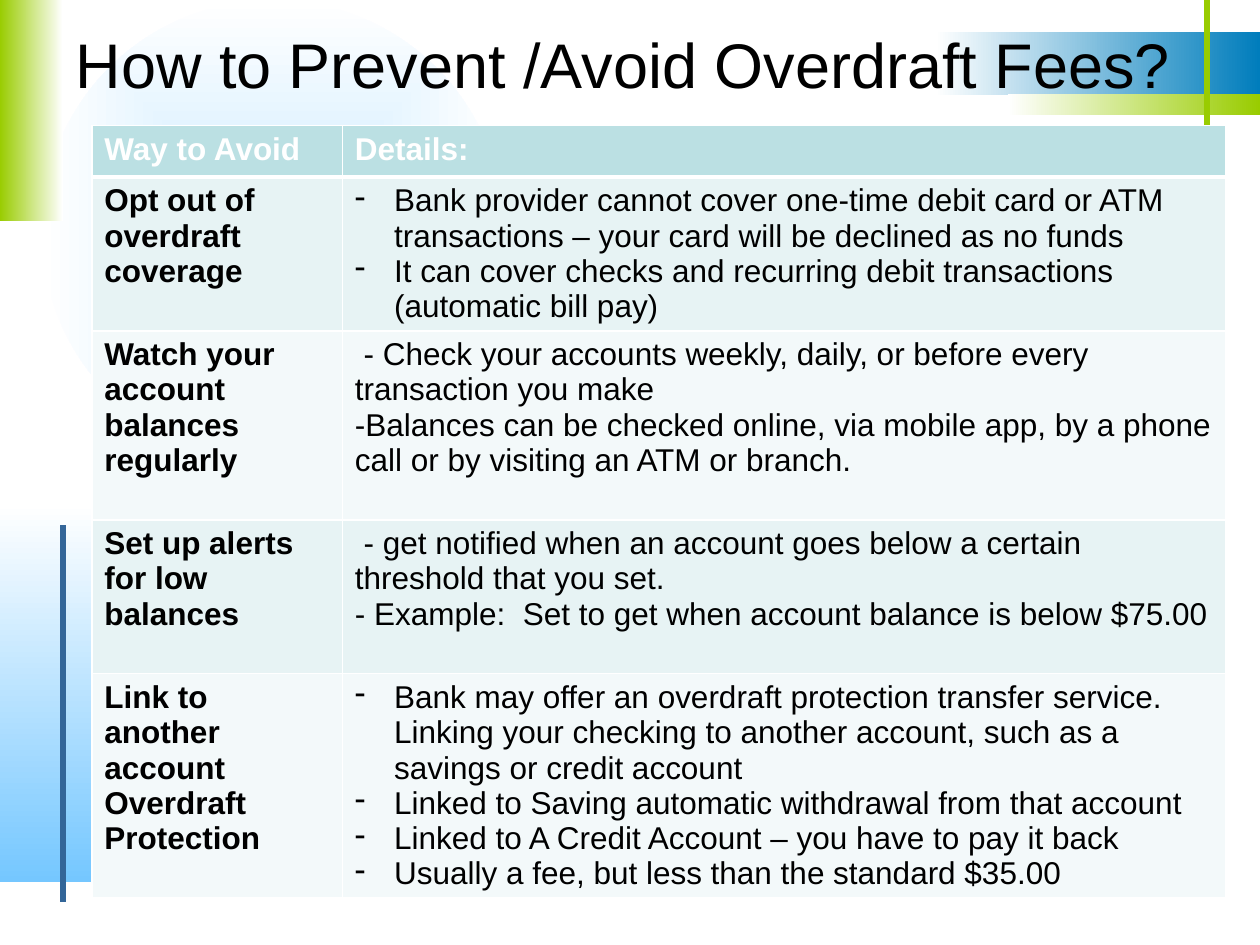
from lxml.etree import SubElement
from pptx import Presentation
from pptx.dml.color import RGBColor
from pptx.enum.shapes import MSO_CONNECTOR, MSO_SHAPE
from pptx.enum.text import MSO_ANCHOR, MSO_AUTO_SIZE, PP_ALIGN
from pptx.oxml import parse_xml
from pptx.oxml.ns import nsdecls, qn
from pptx.util import Cm, Pt

WHITE = RGBColor(0xFF, 0xFF, 0xFF)
BLACK = RGBColor(0, 0, 0)
PALE_BLUE = RGBColor(0xCD, 0xEB, 0xFF)
SKY = RGBColor(0x75, 0xC7, 0xFF)
BLUE = RGBColor(0x00, 0x7D, 0xBC)
STEEL = RGBColor(0x33, 0x66, 0x99)
GREEN = RGBColor(0x99, 0xCC, 0x00)
TEAL = RGBColor(0xBB, 0xE0, 0xE3)
BANDS = [RGBColor(0xE7, 0xF3, 0xF4), RGBColor(0xF3, 0xF9, 0xFA)]

TITLE = "How to Prevent /Avoid Overdraft Fees?"
HEADINGS = ["Way to Avoid", "Details:"]
# Way to avoid, details, whether the details are a bulleted list
WAYS = [
    ("Opt out of overdraft coverage", [
        "Bank provider cannot cover one-time debit card or ATM transactions – "
        "your card will be declined as no funds",
        "It can cover checks and recurring debit transactions (automatic bill pay)",
    ], True),
    ("Watch your account balances regularly", [
        " - Check your accounts weekly, daily, or before every transaction you make",
        "-Balances can be checked online, via mobile app, by a phone call or by "
        "visiting an ATM or branch.",
    ], False),
    ("Set up alerts for low balances", [
        " - get notified when an account goes below a certain threshold that you set.",
        "- Example:  Set to get when account balance is below $75.00",
    ], False),
    ("Link to another account Overdraft Protection", [
        "Bank may offer an overdraft protection transfer service. Linking your "
        "checking to another account, such as a savings or credit account",
        "Linked to Saving automatic withdrawal from that account",
        "Linked to A Credit Account – you have to pay it back",
        "Usually a fee, but less than the standard $35.00",
    ], True),
]
COLUMN_WIDTHS = [5.05, 17.81]
ROW_HEIGHTS = [1.04, 3.08, 3.81, 3.1, 4.5]

# Shape, box in cm, first and last colour, angle (None: from the centre outwards)
PANELS = [
    (MSO_SHAPE.OVAL, (0.84, 0, 9.32, 9.32), PALE_BLUE, WHITE, None),
    (MSO_SHAPE.RECTANGLE, (18.85, 0.64, 6.55, 1.27), WHITE, BLUE, 0),
    (MSO_SHAPE.RECTANGLE, (0, 10.16, 1.9, 7.62), WHITE, SKY, 270),
    (MSO_SHAPE.RECTANGLE, (0, 0, 1.27, 4.45), GREEN, WHITE, 0),
    (MSO_SHAPE.RECTANGLE, (20.32, 1.9, 5.08, 0.43), WHITE, GREEN, 0),
]
# x, top, bottom in cm, colour
RULES = [(24.33, 0, 7.62, GREEN), (1.27, 10.59, 18.19, STEEL)]


def write(frame, paragraphs, size=18, color=BLACK, bold=False, bulleted=False):
    for index, text in enumerate(paragraphs):
        paragraph = frame.paragraphs[0] if index == 0 else frame.add_paragraph()
        paragraph.alignment = PP_ALIGN.LEFT
        run = paragraph.add_run()
        run.text = text
        run.font.name = "Arial"
        run.font.size = Pt(size)
        run.font.bold = bold
        run.font.color.rgb = color
        if bulleted:
            properties = paragraph._p.get_or_add_pPr()
            properties.set("marL", str(Cm(0.79)))
            properties.set("indent", str(-Cm(0.79)))
            SubElement(properties, qn("a:buChar"), char="-")


def add_panel(slide, preset, box, first, last, angle):
    panel = slide.shapes.add_shape(preset, *map(Cm, box))
    panel.shadow.inherit = False
    panel.line.fill.background()
    panel.fill.gradient()
    for stop, color, position in zip(panel.fill.gradient_stops, (first, last), (0, 1)):
        stop.color.rgb = color
        stop.position = position
    if angle is not None:
        panel.fill.gradient_angle = angle
        return
    gradient = panel._element.spPr.find(qn("a:gradFill"))
    gradient.remove(gradient.find(qn("a:lin")))
    radial = SubElement(gradient, qn("a:path"), path="shape")
    SubElement(radial, qn("a:fillToRect"), l="50000", t="50000", r="50000", b="50000")


def add_rule(slide, x, top, bottom, color):
    rule = slide.shapes.add_connector(
        MSO_CONNECTOR.STRAIGHT, Cm(x), Cm(top), Cm(x), Cm(bottom))
    rule.line.color.rgb = color
    rule.line.width = Pt(3)
    SubElement(rule._element.spPr, qn("a:effectLst"))


def style_cell(cell, fill, top=1, bottom=1):
    """Fill the cell and give it white borders; widths are in points."""
    cell.fill.solid()
    cell.fill.fore_color.rgb = fill
    widths = {"lnL": 1, "lnR": 1, "lnT": top, "lnB": bottom}
    for index, (side, width) in enumerate(widths.items()):
        cell._tc.get_or_add_tcPr().insert(index, parse_xml(
            f'<a:{side} {nsdecls("a")} w="{Pt(width)}"><a:solidFill>'
            f'<a:srgbClr val="{WHITE}"/></a:solidFill></a:{side}>'))


def add_ways_table(slide):
    table = slide.shapes.add_table(
        len(ROW_HEIGHTS), len(COLUMN_WIDTHS), Cm(1.85), Cm(2.53),
        Cm(sum(COLUMN_WIDTHS)), Cm(sum(ROW_HEIGHTS))).table
    for column, width in zip(table.columns, COLUMN_WIDTHS):
        column.width = Cm(width)
    for row, height in zip(table.rows, ROW_HEIGHTS):
        row.height = Cm(height)
    for column, heading in enumerate(HEADINGS):
        cell = table.cell(0, column)
        style_cell(cell, TEAL, bottom=3)
        write(cell.text_frame, [heading], color=WHITE, bold=True)
    for row, (way, details, bulleted) in enumerate(WAYS, start=1):
        way_cell, details_cell = table.cell(row, 0), table.cell(row, 1)
        for cell in (way_cell, details_cell):
            style_cell(cell, BANDS[(row - 1) % 2], top=3 if row == 1 else 1)
        write(way_cell.text_frame, [way], bold=True)
        write(details_cell.text_frame, details, bulleted=bulleted)


def main():
    presentation = Presentation()
    presentation.slide_width, presentation.slide_height = Cm(25.4), Cm(19.05)
    slide = presentation.slides.add_slide(presentation.slide_layouts[5])
    slide.background.fill.solid()
    slide.background.fill.fore_color.rgb = WHITE

    title = slide.shapes.title
    for panel in PANELS:
        add_panel(slide, *panel)
    for rule in RULES:
        add_rule(slide, *rule)

    slide.shapes._spTree.append(title._element)  # in front of the panels
    title.left, title.top, title.width, title.height = map(Cm, (1.27, 0.43, 22.86, 1.7))
    title.text_frame.auto_size = MSO_AUTO_SIZE.NONE
    title.text_frame.vertical_anchor = MSO_ANCHOR.MIDDLE
    write(title.text_frame, [TITLE], size=36)

    add_ways_table(slide)
    presentation.save("out.pptx")


if __name__ == "__main__":
    main()
